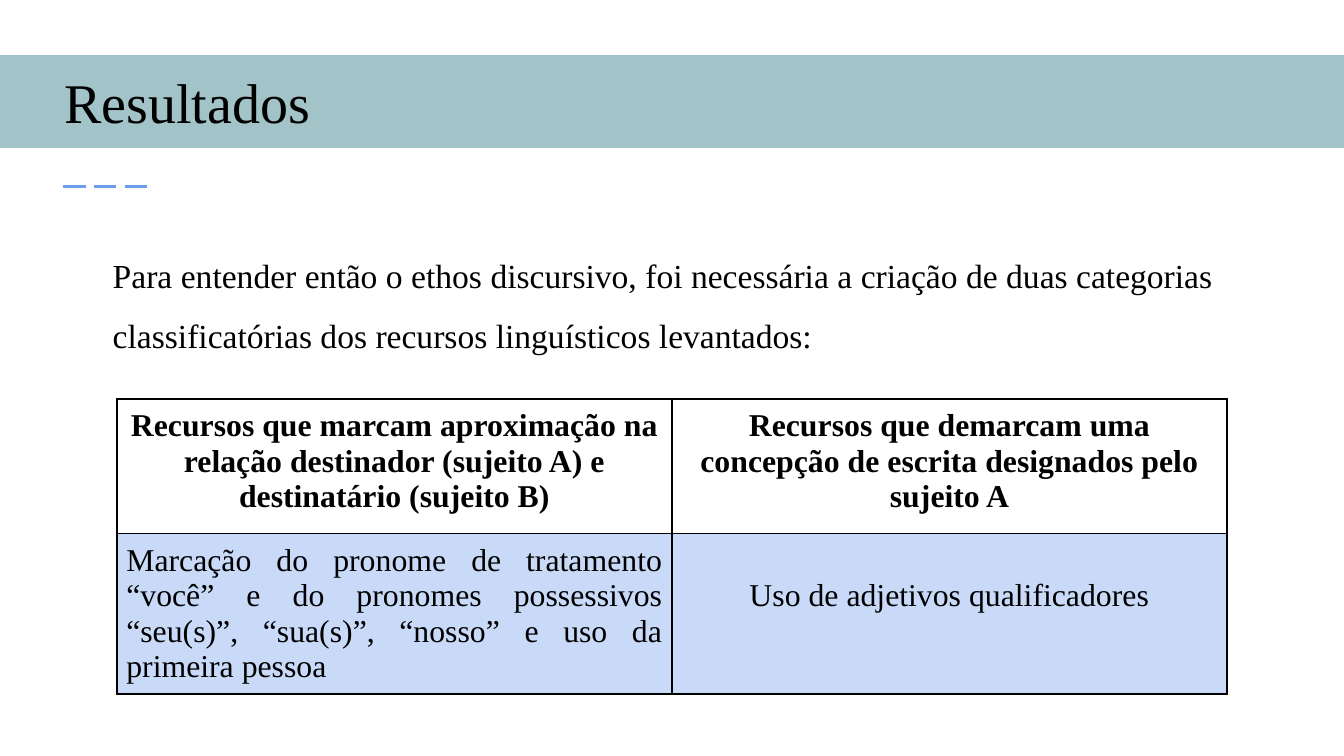
from dataclasses import dataclass

from lxml import etree
from pptx import Presentation
from pptx import util as u
from pptx.dml.color import RGBColor
from pptx.enum import dml, shapes, text
from pptx.oxml import ns


@dataclass(frozen=True)
class Theme:
    """Colours, font and type sizes of the page."""
    font: str = "Times New Roman"
    ink: str = "000000"
    band: str = "A2C4C9"
    dash: str = "6D9EEB"
    tint: str = "C9DAF8"
    paper: str = "FFFFFF"
    title: int = 30
    body: int = 18
    cell: int = 17
    border: int = 1


THEME = Theme()


def color(value):
    """Turn a hex value into a colour."""
    return RGBColor.from_string(value)


def write(para, words, size, align, bold=False):
    """Add one styled run to a paragraph."""
    para.alignment = align
    span = para.add_run()
    span.text = words
    span.font.name = THEME.font
    span.font.size = u.Pt(size)
    span.font.bold = bold
    span.font.color.rgb = color(THEME.ink)


def set_frame(frame, anchor, left=0.1):
    """Set wrapping, anchor and insets of a text frame."""
    frame.word_wrap = True
    frame.vertical_anchor = anchor
    frame.margin_left = u.Inches(left)
    frame.margin_top = frame.margin_right = frame.margin_bottom = u.Inches(0.1)


def add_title(page, words):
    """Add the full-width title band."""
    box = page.shapes.add_shape(shapes.MSO_SHAPE.RECTANGLE, u.Inches(0),
                                u.Inches(0.41), u.Inches(10), u.Inches(0.69))
    box.shadow.inherit = False
    box.fill.solid()
    box.fill.fore_color.rgb = color(THEME.band)
    box.line.fill.background()
    set_frame(box.text_frame, text.MSO_ANCHOR.BOTTOM, left=0.48)
    write(box.text_frame.paragraphs[0], words, THEME.title, text.PP_ALIGN.LEFT)


def add_dashes(page):
    """Add the dashed accent line below the title."""
    line = page.shapes.add_connector(shapes.MSO_CONNECTOR.STRAIGHT, u.Inches(0.47),
                                     u.Inches(1.39), u.Inches(1.14), u.Inches(1.39))
    line.line.color.rgb = color(THEME.dash)
    line.line.width = u.Pt(1.5)
    line.line.dash_style = dml.MSO_LINE.LONG_DASH
    etree.SubElement(line._element.spPr, ns.qn("a:effectLst"))


def add_intro(page, words):
    """Add the introductory paragraph."""
    box = page.shapes.add_textbox(u.Inches(0.74), u.Inches(1.19),
                                  u.Inches(8.39), u.Inches(2.01))
    set_frame(box.text_frame, text.MSO_ANCHOR.MIDDLE)
    para = box.text_frame.paragraphs[0]
    para.line_spacing = 1.5
    write(para, words, THEME.body, text.PP_ALIGN.JUSTIFY)


def add_borders(cell):
    """Draw a solid border on every side of a cell."""
    props = cell._tc.get_or_add_tcPr()
    for place, side in enumerate(("lnL", "lnR", "lnT", "lnB")):
        border = etree.Element(ns.qn(f"a:{side}"), w=str(u.Pt(THEME.border)))
        fill = etree.SubElement(border, ns.qn("a:solidFill"))
        etree.SubElement(fill, ns.qn("a:srgbClr"), val=THEME.ink)
        props.insert(place, border)


def fill_cell(cell, words, fill, align, bold=False, top=0.07):
    """Fill, frame and write one table cell."""
    cell.margin_left = cell.margin_right = cell.margin_bottom = u.Inches(0.07)
    cell.margin_top = u.Inches(top)
    cell.fill.solid()
    cell.fill.fore_color.rgb = color(fill)
    add_borders(cell)
    write(cell.text_frame.paragraphs[0], words, THEME.cell, align, bold)


def add_categories(page, headings, left_words, right_words):
    """Add the table of the two categories."""
    table = page.shapes.add_table(2, 2, u.Inches(0.87), u.Inches(2.97),
                                  u.Inches(8.26), u.Inches(2.19)).table
    for column in table.columns:
        column.width = u.Inches(4.13)
    for row, height in zip(table.rows, (1, 1.19)):
        row.height = u.Inches(height)
    center = text.PP_ALIGN.CENTER
    for index, heading in enumerate(headings):
        fill_cell(table.cell(0, index), heading, THEME.paper, center, bold=True)
    fill_cell(table.cell(1, 0), left_words, THEME.tint, text.PP_ALIGN.JUSTIFY)
    fill_cell(table.cell(1, 1), right_words, THEME.tint, center, top=0.33)


def main():
    """Build the results page."""
    deck = Presentation()
    deck.slide_width = u.Inches(10)
    deck.slide_height = deck.slide_width * 9 // 16
    page = deck.slides.add_slide(deck.slide_layouts[6])
    page.background.fill.solid()
    page.background.fill.fore_color.rgb = color(THEME.paper)
    add_dashes(page)
    add_title(page, "Resultados")
    add_categories(
        page,
        ("Recursos que marcam aproximação na relação destinador (sujeito A) "
         "e destinatário (sujeito B)",
         "Recursos que demarcam uma concepção de escrita designados pelo sujeito A"),
        "Marcação do pronome de tratamento “você” e do pronomes possessivos "
        "“seu(s)”, “sua(s)”, “nosso” e uso da primeira pessoa",
        "Uso de adjetivos qualificadores")
    add_intro(page, "Para entender então o ethos discursivo, foi necessária a criação de "
                    "duas categorias classificatórias dos recursos linguísticos levantados:")
    deck.save("out.pptx")


if __name__ == "__main__":
    main()
